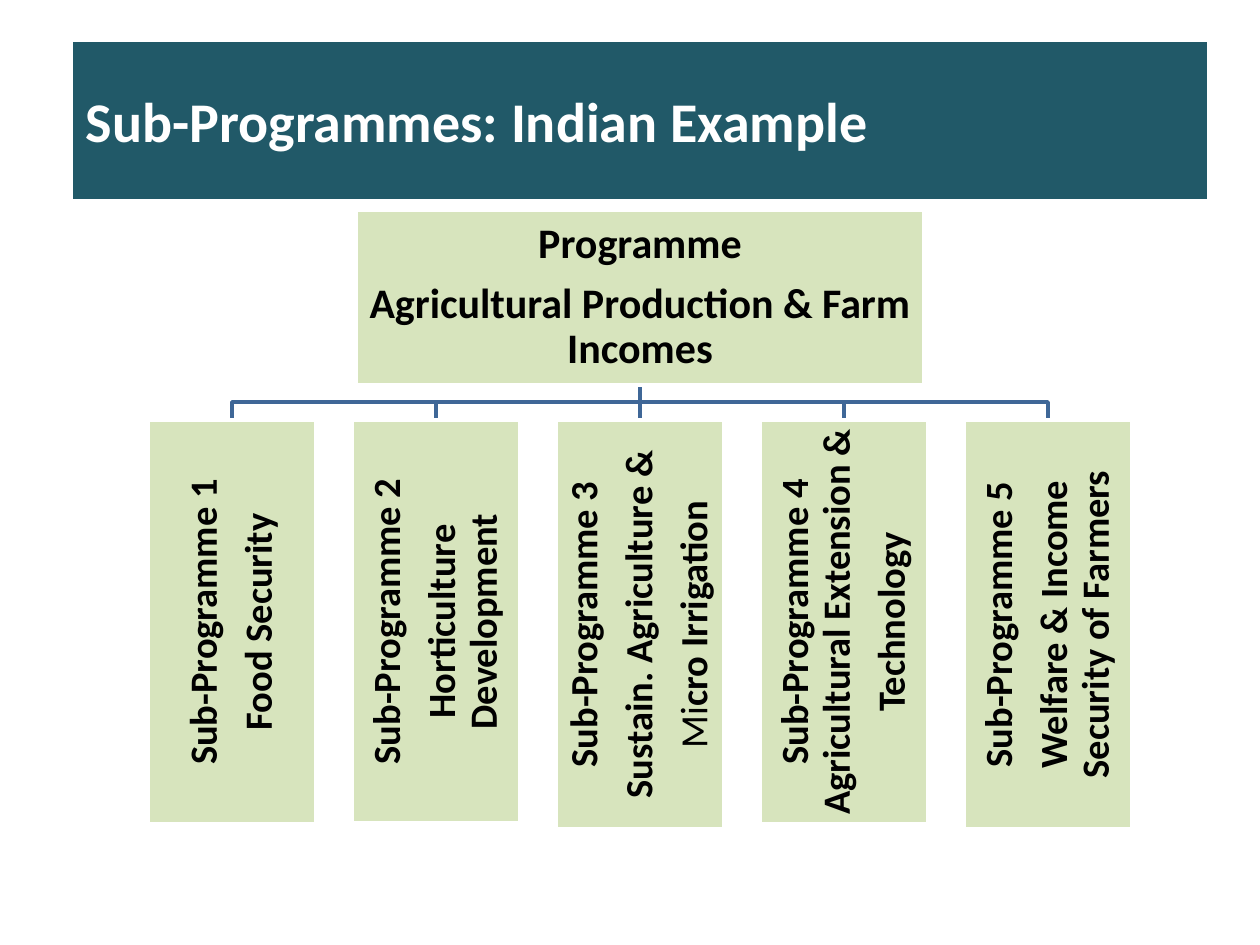
import pptx
import pptx.dml.color
import pptx.enum.shapes
import pptx.enum.text
import pptx.util

PX = 914400 / 126  # EMU in one pixel
TEAL = pptx.dml.color.RGBColor(0x21, 0x59, 0x68)
GREEN = pptx.dml.color.RGBColor(0xD7, 0xE4, 0xBD)
BLUE = pptx.dml.color.RGBColor(0x3F, 0x67, 0x97)
WHITE = pptx.dml.color.RGBColor(0xFF, 0xFF, 0xFF)
BLACK = pptx.dml.color.RGBColor(0, 0, 0)


def px(length):
    return pptx.util.Emu(round(length * PX))


def add_box(slide, left, top, width, height, lines, size):
    shape = slide.shapes.add_shape(
        pptx.enum.shapes.MSO_SHAPE.RECTANGLE, px(left), px(top), px(width), px(height))
    shape.shadow.inherit = False
    shape.fill.solid()
    shape.fill.fore_color.rgb = GREEN
    shape.line.color.rgb = WHITE
    shape.line.width = pptx.util.Pt(2)
    frame = shape.text_frame
    frame.word_wrap = True
    frame.vertical_anchor = pptx.enum.text.MSO_ANCHOR.MIDDLE
    frame.margin_left = frame.margin_right = px(2)
    frame.margin_top = frame.margin_bottom = px(2)
    frame.text = "\n".join(lines)
    for paragraph in frame.paragraphs:
        paragraph.alignment = pptx.enum.text.PP_ALIGN.CENTER
        paragraph.line_spacing = 0.9
        paragraph.space_after = pptx.util.Pt(size * 0.35)
        paragraph.font.name = "Calibri"
        paragraph.font.size = pptx.util.Pt(size)
        paragraph.font.bold = True
        paragraph.font.color.rgb = BLACK
    return shape


presentation = pptx.Presentation()
presentation.slide_width = px(1260)
presentation.slide_height = px(945)
slide = presentation.slides.add_slide(presentation.slide_layouts[5])

# Title band
title = slide.shapes.title
title.left, title.top, title.width, title.height = px(73), px(42), px(1134), px(157)
title.fill.solid()
title.fill.fore_color.rgb = TEAL
title.text_frame.text = "Sub-Programmes: Indian Example"
title.text_frame.vertical_anchor = pptx.enum.text.MSO_ANCHOR.MIDDLE
paragraph = title.text_frame.paragraphs[0]
paragraph.alignment = pptx.enum.text.PP_ALIGN.LEFT
paragraph.font.name = "Calibri"
paragraph.font.size = pptx.util.Pt(32)
paragraph.font.bold = True
paragraph.font.color.rgb = WHITE

# Sub-programmes: text and box height
sub_programmes = [
    (["Sub-Programme 1", "Food Security"], 404),
    (["Sub-Programme 2", "Horticulture Development"], 403),
    (["Sub-Programme 3", "Sustain. Agriculture &", "Micro Irrigation"], 409),
    (["Sub-Programme 4 Agricultural Extension &", "Technology"], 404),
    (["Sub-Programme 5", "Welfare & Income Security of Farmers"], 409),
]
first_left, pitch, box_width, box_top = 148, 204, 168, 420
lefts = [first_left + index * pitch for index in range(len(sub_programmes))]
centre, branch_top, branch_middle = 640, 384, 402

# Branches from the programme to each sub-programme
for left in lefts:
    end = left + box_width / 2
    builder = slide.shapes.build_freeform(centre, branch_top, scale=PX)
    if end == centre:
        points = [(end, box_top)]
    else:
        points = [(centre, branch_middle), (end, branch_middle), (end, box_top)]
    builder.add_line_segments(points, close=False)
    branch = builder.convert_to_shape()
    branch.shadow.inherit = False
    branch.fill.background()
    branch.line.color.rgb = BLUE
    branch.line.width = pptx.util.Pt(2)

# Programme box
add_box(slide, 356, 210, 568, 175,
        ["Programme", "Agricultural Production & Farm Incomes"], 24)

# Sub-programme boxes, with text reading upwards
for left, (lines, height) in zip(lefts, sub_programmes):
    box = add_box(slide, left, box_top, box_width, height, lines, 22)
    box.text_frame._txBody.bodyPr.set("vert", "vert270")
    if lines[-1] == "Micro Irrigation":
        paragraph = box.text_frame.paragraphs[-1]
        paragraph.runs[0].text = "Mi"
        paragraph.runs[0].font.bold = False
        paragraph.add_run().text = "cro Irrigation"

presentation.save("out.pptx")
